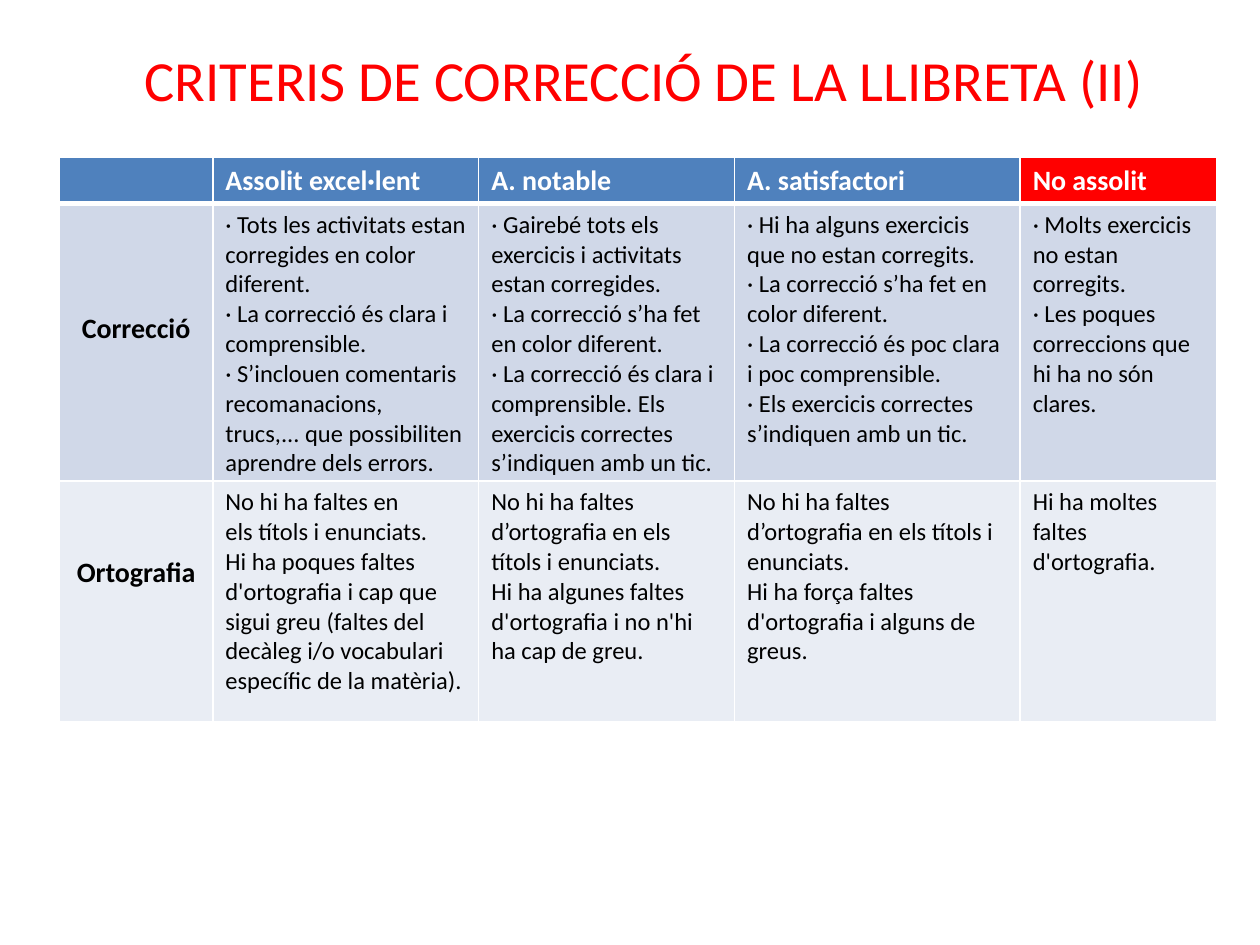
from lxml.etree import SubElement
from pptx import Presentation
from pptx.dml.color import RGBColor
from pptx.enum.text import MSO_ANCHOR, PP_ALIGN
from pptx.oxml.ns import qn
from pptx.util import Pt

COLORS = {
    "red": "FF0000",
    "header": "4F81BD",
    "band_dark": "D0D8E8",
    "band_light": "E9EDF4",
    "white": "FFFFFF",
    "black": "000000",
}
HEADERS = ["", "Assolit excel·lent", "A. notable", "A. satisfactori", "No assolit"]
CRITERIA = [
    {
        "name": "Correcció",
        "fill": "band_dark",
        "label_top": 62,
        "levels": [
            [
                "· Tots les activitats estan corregides en color diferent.",
                "· La correcció és clara i",
                "comprensible.",
                "· S’inclouen comentaris recomanacions,",
                "trucs,... que possibiliten aprendre dels errors.",
            ],
            [
                "· Gairebé tots els exercicis i activitats estan corregides.",
                "· La correcció s’ha fet en color diferent.",
                "· La correcció és clara i comprensible. Els exercicis correctes s’indiquen amb un tic.",
            ],
            [
                "· Hi ha alguns exercicis que no estan corregits.",
                "· La correcció s’ha fet en color diferent.",
                "· La correcció és poc clara i poc comprensible.",
                "· Els exercicis correctes s’indiquen amb un tic.",
            ],
            [
                "· Molts exercicis no estan corregits.",
                "· Les poques",
                "correccions que hi ha no són clares.",
            ],
        ],
    },
    {
        "name": "Ortografia",
        "fill": "band_light",
        "label_top": 42.5,
        "levels": [
            [
                "No hi ha faltes en",
                "els títols i enunciats.",
                "Hi ha poques faltes",
                "d'ortografia i cap que sigui greu (faltes del decàleg i/o vocabulari específic de la matèria).",
            ],
            [
                "No hi ha faltes d’ortografia en els títols i enunciats.",
                "Hi ha algunes faltes",
                "d'ortografia i no n'hi ha cap de greu.",
            ],
            [
                "No hi ha faltes d’ortografia en els títols i enunciats.",
                "Hi ha força faltes d'ortografia i alguns de greus.",
            ],
            ["Hi ha moltes faltes d'ortografia."],
        ],
    },
]
COLUMN_WIDTHS = [87.6, 152, 146.2, 163.2, 112.4]
ROW_HEIGHTS = [26, 152.6, 137.5]


def write_text(text_frame, lines, size=14, color="black", bold=False, align=PP_ALIGN.LEFT):
    for index, line in enumerate(lines):
        paragraph = text_frame.paragraphs[0] if index == 0 else text_frame.add_paragraph()
        paragraph.alignment = align
        font = paragraph.font
        if line:
            run = paragraph.add_run()
            run.text = line
            font = run.font
        font.name = "Calibri"
        font.size = Pt(size)
        font.bold = bold
        font.color.rgb = RGBColor.from_string(COLORS[color])


def style_cell(cell, fill, bottom_width=1, top_width=1):
    properties = cell._tc.get_or_add_tcPr()
    widths = {"a:lnL": 1, "a:lnR": 1, "a:lnT": top_width, "a:lnB": bottom_width}
    for tag, width in widths.items():
        line = SubElement(properties, qn(tag), w=str(int(Pt(width))))
        solid = SubElement(line, qn("a:solidFill"))
        SubElement(solid, qn("a:srgbClr"), val=COLORS["white"])
    cell.fill.solid()
    cell.fill.fore_color.rgb = RGBColor.from_string(COLORS[fill])


def add_title(slide, left, top, width, height):
    shape = slide.shapes.add_textbox(Pt(left), Pt(top), Pt(width), Pt(height))
    text_frame = shape.text_frame
    text_frame.word_wrap = True
    text_frame.vertical_anchor = MSO_ANCHOR.MIDDLE
    write_text(text_frame, ["CRITERIS DE CORRECCIÓ DE LA LLIBRETA (II)"],
               size=32.4, color="red", align=PP_ALIGN.CENTER)


def add_rubric(slide, left, top, width, height):
    frame = slide.shapes.add_table(len(ROW_HEIGHTS), len(COLUMN_WIDTHS),
                                   Pt(left), Pt(top), Pt(width), Pt(height))
    table = frame.table
    for column, column_width in zip(table.columns, COLUMN_WIDTHS):
        column.width = Pt(column_width)
    for row, row_height in zip(table.rows, ROW_HEIGHTS):
        row.height = Pt(row_height)

    for index, header in enumerate(HEADERS):
        cell = table.cell(0, index)
        style_cell(cell, "red" if header == "No assolit" else "header", bottom_width=3)
        write_text(cell.text_frame, [header], size=16, color="white", bold=True)

    for row_index, criterion in enumerate(CRITERIA, start=1):
        top_width = 3 if row_index == 1 else 1
        label = table.cell(row_index, 0)
        style_cell(label, criterion["fill"], top_width=top_width)
        label.margin_top = Pt(criterion["label_top"])
        write_text(label.text_frame, [criterion["name"]],
                   size=16, bold=True, align=PP_ALIGN.CENTER)
        for column_index, lines in enumerate(criterion["levels"], start=1):
            cell = table.cell(row_index, column_index)
            style_cell(cell, criterion["fill"], top_width=top_width)
            write_text(cell.text_frame, lines)


def main():
    presentation = Presentation()
    presentation.slide_width = Pt(720)
    presentation.slide_height = Pt(540)
    slide = presentation.slides.add_slide(presentation.slide_layouts[6])
    add_title(slide, 44, 0, 648, 90)
    add_rubric(slide, 34, 90, sum(COLUMN_WIDTHS), sum(ROW_HEIGHTS))
    presentation.save("out.pptx")


if __name__ == "__main__":
    main()
